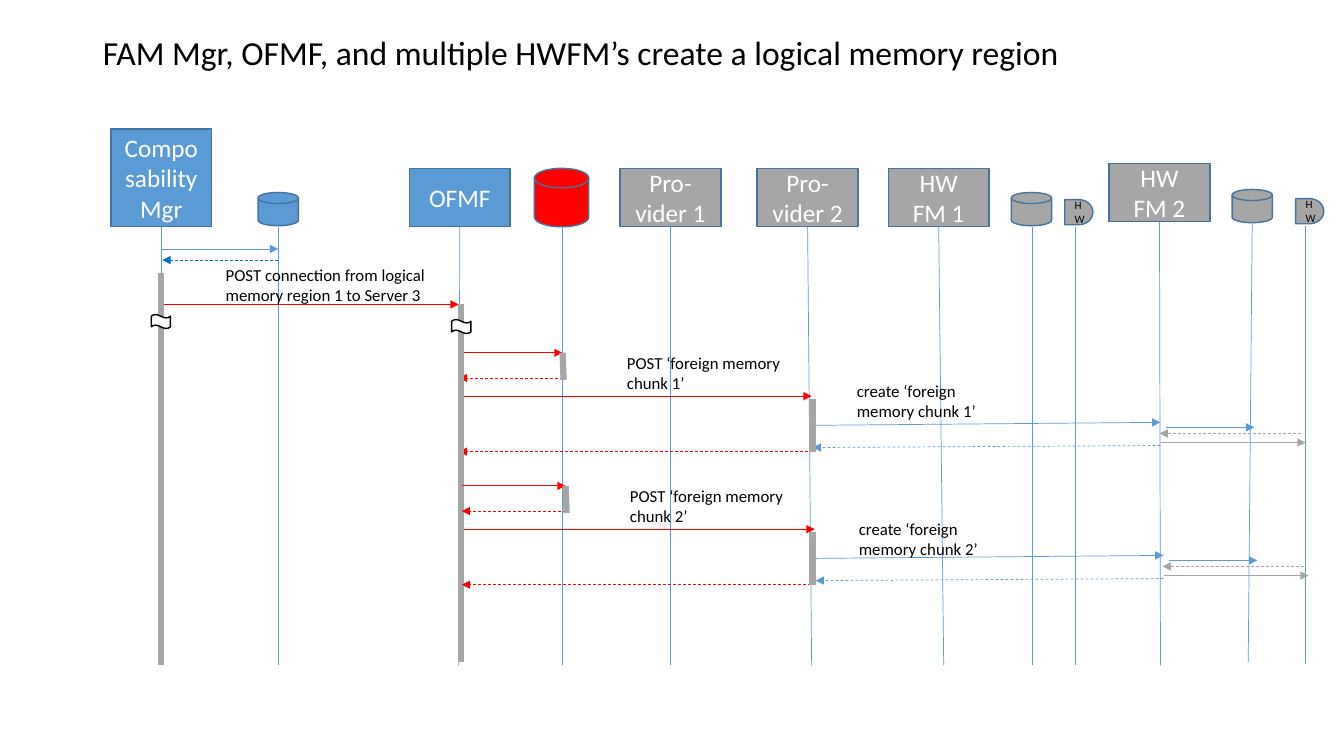
from lxml import etree
from pptx import Presentation
from pptx.dml.color import RGBColor
from pptx.enum.dml import MSO_LINE
from pptx.enum.shapes import MSO_CONNECTOR, MSO_SHAPE
from pptx.enum.text import MSO_ANCHOR, MSO_AUTO_SIZE, PP_ALIGN
from pptx.oxml.ns import qn
from pptx.util import Pt

RECT = MSO_SHAPE.RECTANGLE
DISK = MSO_SHAPE.FLOWCHART_MAGNETIC_DISK
DELAY = MSO_SHAPE.FLOWCHART_DELAY
WAVE = MSO_SHAPE.WAVE
LINE = MSO_CONNECTOR.STRAIGHT
DASH = MSO_LINE.DASH
LEFT, MID = PP_ALIGN.LEFT, PP_ALIGN.CENTER
CENTER = MSO_ANCHOR.MIDDLE
FIT = MSO_AUTO_SIZE.SHAPE_TO_FIT_TEXT

SCALE = 9144
WIDE, HIGH = 1333, 750
FONT = "Calibri"
HUES = {
    "blue": "5B9BD5", "edge": "43739E", "deep": "0070C0", "red": "FF0000",
    "gray": "A6A6A6", "white": "FFFFFF", "black": "000000",
}


def px(*nums):
    return [round(num * SCALE) for num in nums]


def rgb(name):
    return RGBColor.from_string(HUES[name])


class Chart:
    """Draw the parts of a sequence diagram on one slide in a shared style."""

    def __init__(self, slide):
        self.slide = slide
        self.shapes = slide.shapes

    def text(self, frame, lines, size, hue, align):
        frame.word_wrap = True
        for i, line in enumerate(lines):
            para = frame.add_paragraph() if i else frame.paragraphs[0]
            para.alignment = align
            run = para.add_run()
            run.text = line
            run.font.name = FONT
            run.font.size = Pt(size)
            run.font.color.rgb = rgb(hue)

    def title(self, text, box):
        head = self.shapes.title
        head.left, head.top, head.width, head.height = px(*box)
        self.text(head.text_frame, [text], 24, "black", LEFT)
        head.text_frame.vertical_anchor = CENTER
        head.text_frame.paragraphs[0].line_spacing = 0.9

    def shape(self, kind, box, fill, lines=(), size=18, ink="white", edge="edge"):
        item = self.shapes.add_shape(kind, *px(*box))
        item.shadow.inherit = False
        item.fill.solid()
        item.fill.fore_color.rgb = rgb(fill)
        item.line.color.rgb = rgb(edge)
        item.line.width = Pt(1)
        self.text(item.text_frame, lines, size, ink, MID)
        return item

    def label(self, text, x, y, width=176):
        frame = self.shapes.add_textbox(*px(x, y, width, 50)).text_frame
        self.text(frame, [text], 12, "black", LEFT)
        frame.auto_size = FIT

    def line(self, ends, hue, width=0.5):
        item = self.shapes.add_connector(LINE, *px(*ends))
        item.line.color.rgb = rgb(hue)
        item.line.width = Pt(width)
        etree.SubElement(item._element.spPr, qn("a:effectLst"))
        return item

    def arrow(self, ends, hue, dash=False):
        item = self.line(ends, hue)
        if dash:
            item.line.dash_style = DASH
        shaft = item._element.spPr.find(qn("a:ln"))
        etree.SubElement(shaft, qn("a:tailEnd")).set("type", "triangle")

    def bar(self, ends):
        self.line(ends, "gray", 4.5)

    def life(self, ends, box=None):
        item = self.line(ends, "blue")
        if box is not None:
            item.begin_connect(box, 2)

    def chunk(self, num, dx, dy):
        def move(x1, y1, x2, y2):
            return x1 + dx, y1 + dy, x2 + dx, y2 + dy

        for ends, hue, dash in CALLS:
            self.arrow(move(*ends), hue, dash)
        self.bar(move(558, 350, 559, 377))
        self.bar((806, 396 + dy, 806, 448 + dy))
        self.label(f"POST ‘foreign memory chunk {num}’", 612 + dx, 345 + dy)


ACTORS = [
    (["Composability", "Mgr"], (110, 128, 100, 97), "blue", (160, 660)),
    (["OFMF"], (406, 167, 100, 58), "blue", (455, 660)),
    (["Pro-vider 1"], (615, 167, 100, 58), "gray", (665, 660)),
    (["Pro-vider 2"], (751, 167, 100, 58), "gray", (805, 660)),
    (["HW", "FM 1"], (881, 167, 100, 58), "gray", (936, 660)),
    (["HW", "FM 2"], (1100, 162, 100, 58), "gray", (1151, 660)),
]
STORES = [
    ((256, 191, 40, 33), "blue", (276, 225, 276, 660)),
    ((530, 167, 54, 58), "red", (558, 225, 558, 660)),
    ((1003, 191, 40, 33), "gray", (1024, 225, 1024, 660)),
    ((1222, 188, 40, 33), "gray", (1242, 222, 1238, 657)),
]
UNITS = [
    ((1056, 198, 28, 25), (1067, 225, 1067, 660)),
    ((1285, 197, 28, 25), (1295, 224, 1295, 659)),
]
CALLS = [
    ((455, 350, 558, 350), "red", False),
    ((558, 375, 455, 375), "red", True),
    ((457, 393, 805, 393), "red", False),
    ((806, 422, 1151, 419), "blue", False),
    ((1151, 442, 806, 444), "blue", True),
    ((1156, 424, 1244, 424), "blue", False),
    ((1290, 430, 1150, 430), "gray", True),
    ((806, 448, 455, 448), "red", True),
    ((1151, 439, 1295, 439), "gray", False),
]


def main():
    deck = Presentation()
    deck.slide_width, deck.slide_height = px(WIDE, HIGH)
    chart = Chart(deck.slides.add_slide(deck.slide_layouts[5]))
    chart.title("FAM Mgr, OFMF, and multiple HWFM’s create a logical memory region",
                (92, 23, 1150, 62))
    for lines, box, fill, end in ACTORS:
        x, y, width, height = box
        actor = chart.shape(RECT, box, fill, lines)
        chart.life((x + width // 2, y + height, *end), actor)
    for box, fill, ends in STORES:
        chart.shape(DISK, box, fill)
        chart.life(ends)
    for box, ends in UNITS:
        chart.life(ends)
        chart.shape(DELAY, box, "gray", ["HW"], 8, "black")

    chart.arrow((161, 302, 455, 302), "red")
    chart.arrow((161, 247, 276, 247), "blue")
    chart.arrow((276, 258, 161, 258), "deep", True)
    chart.label("POST connection from logical memory region 1 to Server 3",
                214, 258, 235)
    chart.chunk(1, 0, 0)
    chart.bar((457, 302, 457, 657))
    chart.chunk(2, 3, 132)
    for num, x, y in [(1, 840, 373), (2, 842, 510)]:
        chart.label(f"create ‘foreign memory chunk {num}’", x, y)
    chart.bar((160, 271, 160, 660))
    for x, y in [(150, 312), (448, 317)]:
        chart.shape(WAVE, (x, y, 19, 14), "white", edge="black")
    deck.save("out.pptx")


if __name__ == "__main__":
    main()
